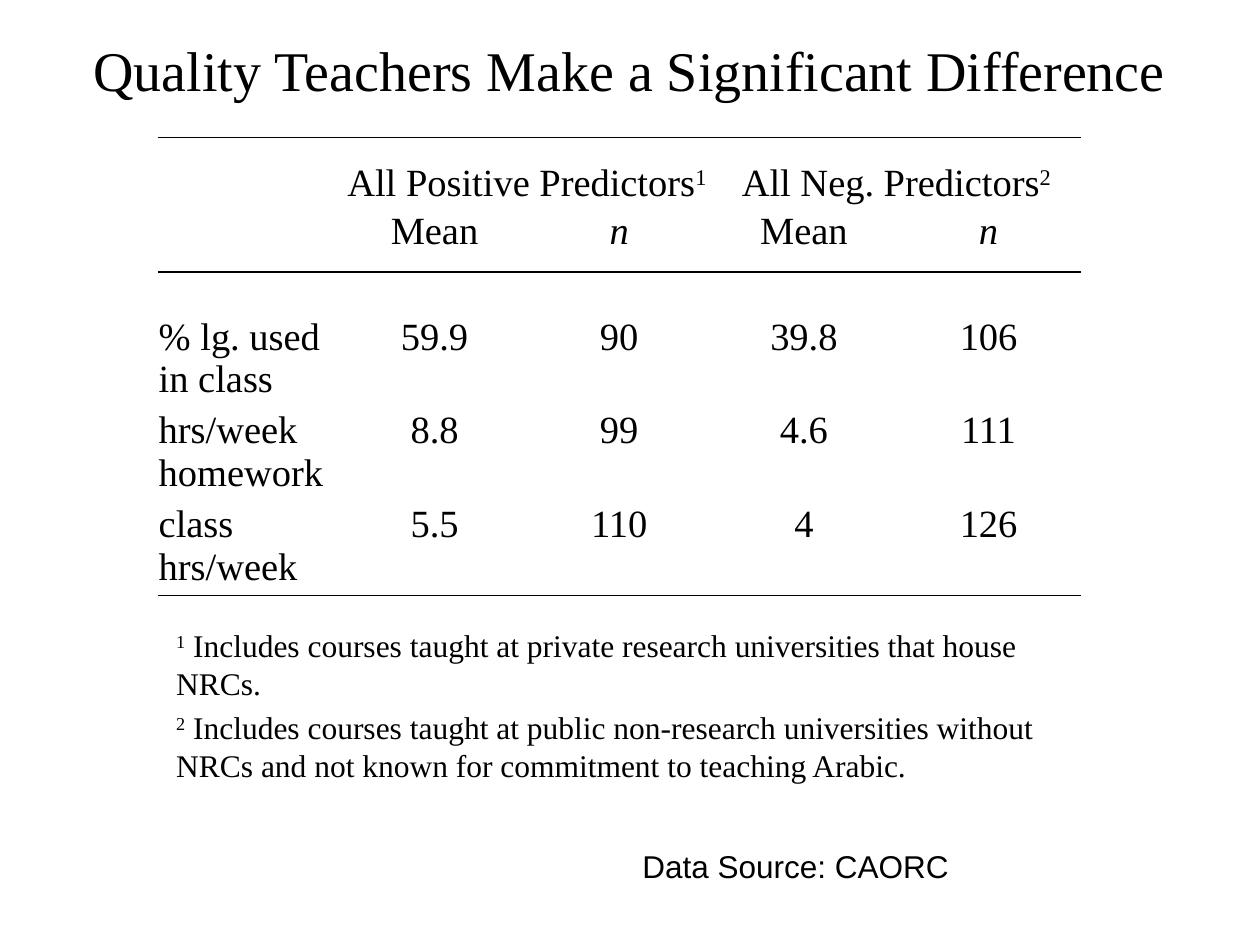
from lxml.etree import SubElement
from pptx import Presentation
from pptx.dml.color import RGBColor
from pptx.enum.text import MSO_ANCHOR as Anchor, PP_ALIGN as Align
from pptx.oxml.ns import qn
from pptx.util import Inches, Pt

COLORS = {"ink": "000000"}
SERIF, SANS = "Times New Roman", "Arial"
NO_GRID_STYLE = "{2D5ABB26-0587-4C30-8999-92F81FD0307C}"
WIDTH, HEIGHT = 10, 7.5

ROW_HEIGHTS = [0.54, 0.44, 1.04, 0.73, 0.68]
TOP_GAPS = {0: 0.2, 2: 0.35}
RULES = {0: ["T"], 1: ["B"], 2: ["T"], 4: ["B"]}
GROUPS = [("All Positive Predictors", "1"), ("All Neg. Predictors", "2")]
MEASURES = [
    ["% lg. used in class", "59.9", "90", "39.8", "106"],
    ["hrs/week homework", "8.8", "99", "4.6", "111"],
    ["class hrs/week", "5.5", "110", "4", "126"],
]
FOOTNOTES = [
    ("1", " Includes courses taught at private research universities that house NRCs."),
    ("2", " Includes courses taught at public non-research universities without "
          "NRCs and not known for commitment to teaching Arabic."),
]


def add_run(paragraph, text, size, face=SERIF, italic=False, raised=False):
    run = paragraph.add_run()
    run.text = text
    font = run.font
    font.size, font.name, font.italic = Pt(size), face, italic
    font.color.rgb = RGBColor.from_string(COLORS["ink"])
    if raised:
        font._element.set("baseline", "30000")


def add_frame(slide, box):
    frame = slide.shapes.add_textbox(*map(Inches, box)).text_frame
    frame.word_wrap = True
    return frame


def add_title(slide, box):
    frame = add_frame(slide, box)
    frame.vertical_anchor = Anchor.MIDDLE
    heading = frame.paragraphs[0]
    heading.alignment = Align.CENTER
    add_run(heading, "Quality Teachers Make a Significant Difference", 32)


def rule_cell(cell, ruled_sides):
    properties = cell._tc.get_or_add_tcPr()
    for side in "LRTB":
        line = SubElement(properties, qn(f"a:ln{side}"), w=str(Pt(1)))
        if side in ruled_sides:
            fill = SubElement(line, qn("a:solidFill"))
            SubElement(fill, qn("a:srgbClr"), val=COLORS["ink"])
        else:
            SubElement(line, qn("a:noFill"))
    cell.fill.background()


def fill_cell(cell, text, centred=True, italic=False, mark=""):
    paragraph = cell.text_frame.paragraphs[0]
    paragraph.alignment = Align.CENTER if centred else Align.LEFT
    add_run(paragraph, text, 22, italic=italic)
    if mark:
        add_run(paragraph, mark, 22, raised=True)


def add_predictor_table(slide, box):
    rows, columns = len(ROW_HEIGHTS), len(MEASURES[0])
    table = slide.shapes.add_table(rows, columns, *map(Inches, box)).table
    table.first_row = table.horz_banding = False
    table._tbl.tblPr.find(qn("a:tableStyleId")).text = NO_GRID_STYLE
    for column in table.columns:
        column.width = Inches(box[2] / columns)
    for r, height in enumerate(ROW_HEIGHTS):
        table.rows[r].height = Inches(height)
        for cell in table.rows[r].cells:
            cell.margin_left = cell.margin_right = Inches(0.01)
            cell.margin_top = Inches(TOP_GAPS.get(r, 0.01))
            cell.margin_bottom = 0
            rule_cell(cell, RULES.get(r, []))

    table.cell(0, 0).merge(table.cell(1, 0))
    for g, (group, mark) in enumerate(GROUPS):
        first = 1 + 2 * g
        table.cell(0, first).merge(table.cell(0, first + 1))
        fill_cell(table.cell(0, first), group, mark=mark)
        fill_cell(table.cell(1, first), "Mean")
        fill_cell(table.cell(1, first + 1), "n", italic=True)
    for r, measure in enumerate(MEASURES, start=2):
        for c, value in enumerate(measure):
            fill_cell(table.cell(r, c), value, centred=c > 0)


def add_footnotes(slide, box):
    frame = add_frame(slide, box)
    for i, (mark, note) in enumerate(FOOTNOTES):
        paragraph = frame.add_paragraph() if i else frame.paragraphs[0]
        paragraph._p.get_or_add_pPr().set("marL", str(Inches(0.38)))
        if i:
            paragraph.space_before = Pt(3.6)
        add_run(paragraph, mark, 18, raised=True)
        add_run(paragraph, note, 18)


def add_data_source(slide, box):
    add_run(add_frame(slide, box).paragraphs[0], "Data Source: CAORC", 18, SANS)


def main():
    deck = Presentation()
    deck.slide_width, deck.slide_height = Inches(WIDTH), Inches(HEIGHT)
    slide = deck.slides.add_slide(deck.slide_layouts[6])
    add_title(slide, (0.05 * WIDTH, 0.17, 0.9 * WIDTH, 0.1 * HEIGHT))
    add_footnotes(slide, (0.92, 4.92, 7.75, 1.33))
    add_predictor_table(slide, (1.25, 1.09, 7.33, sum(ROW_HEIGHTS)))
    add_data_source(slide, (0.5 * WIDTH, 6.67, 0.375 * WIDTH, 0.4))
    deck.save("out.pptx")


if __name__ == "__main__":
    main()
